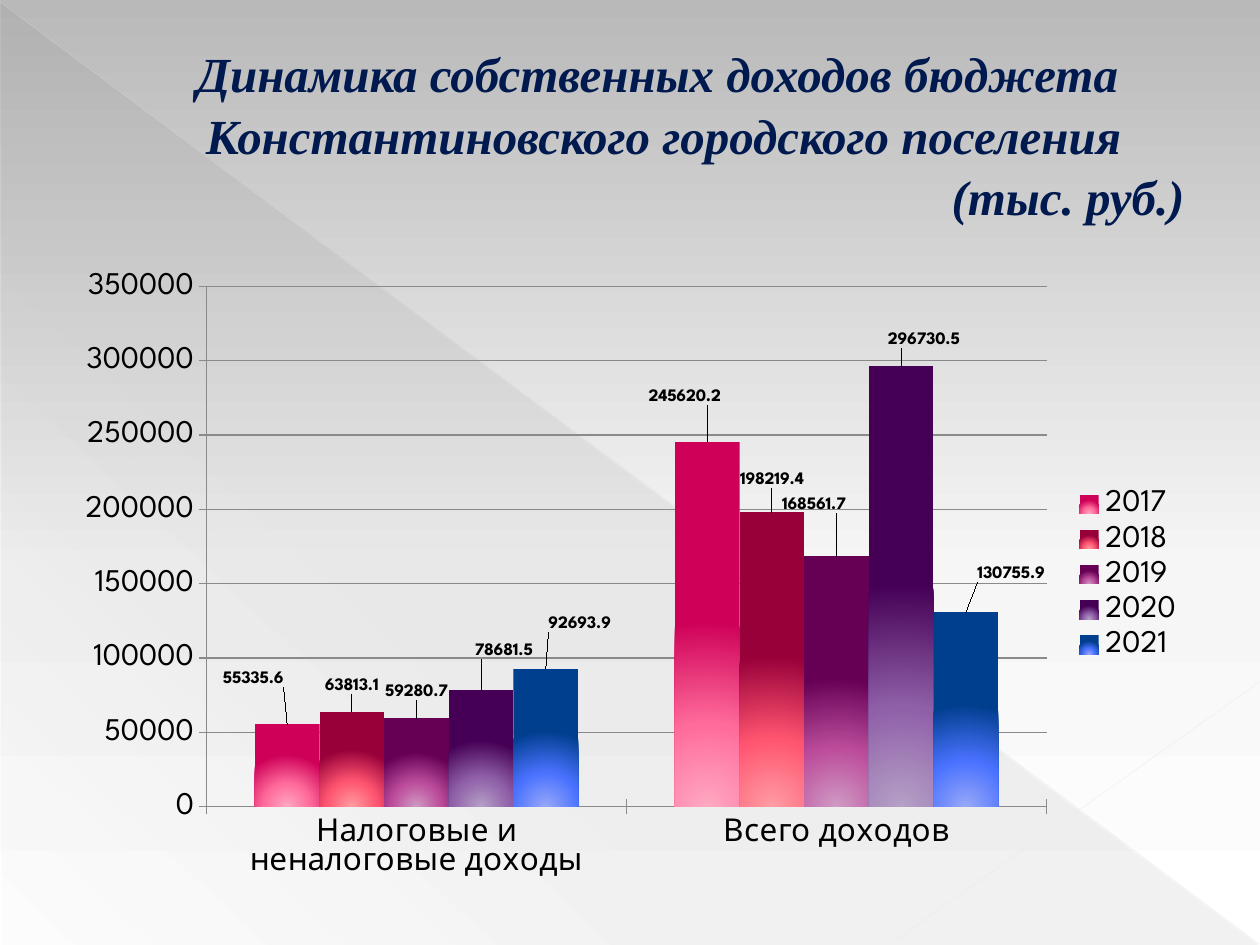
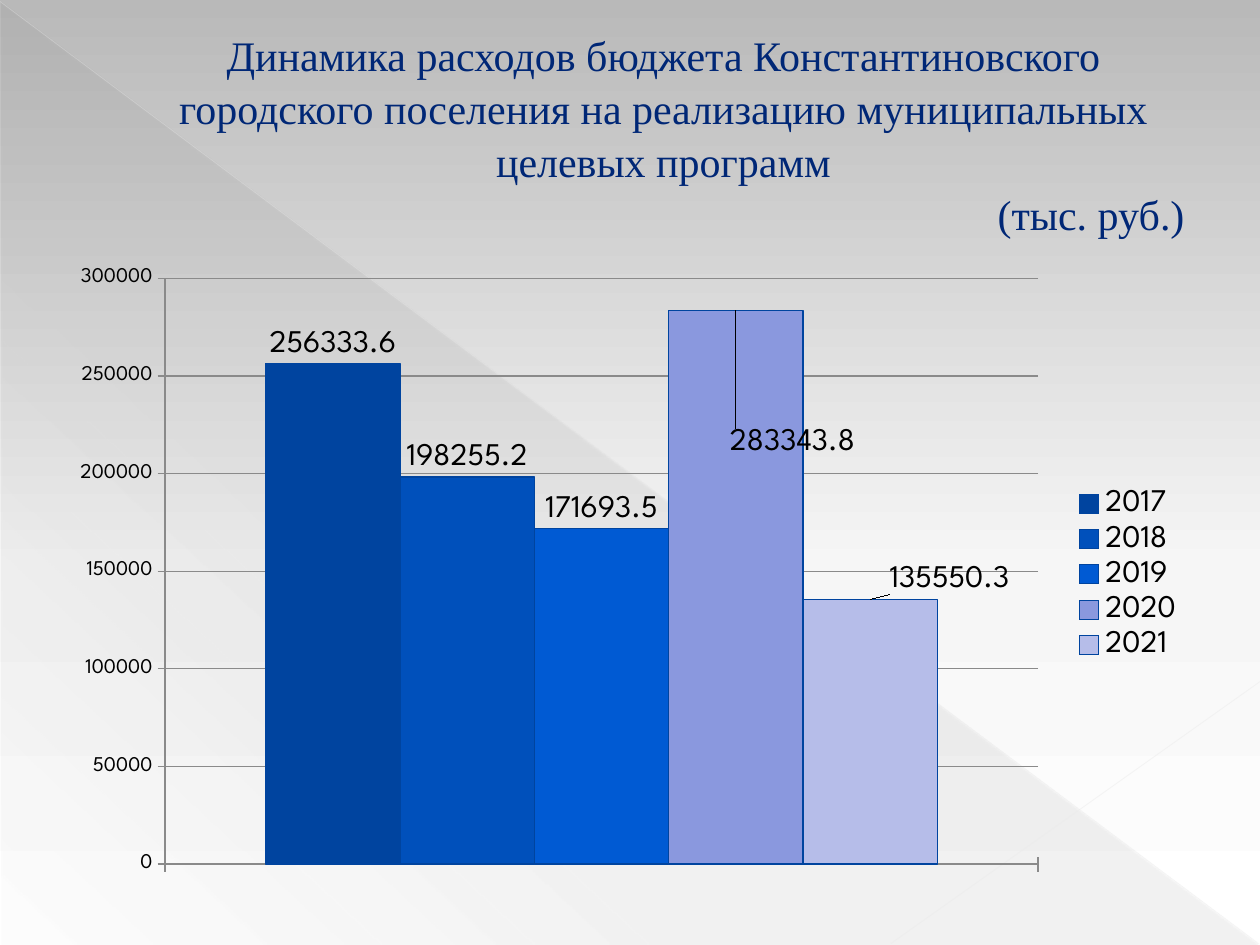
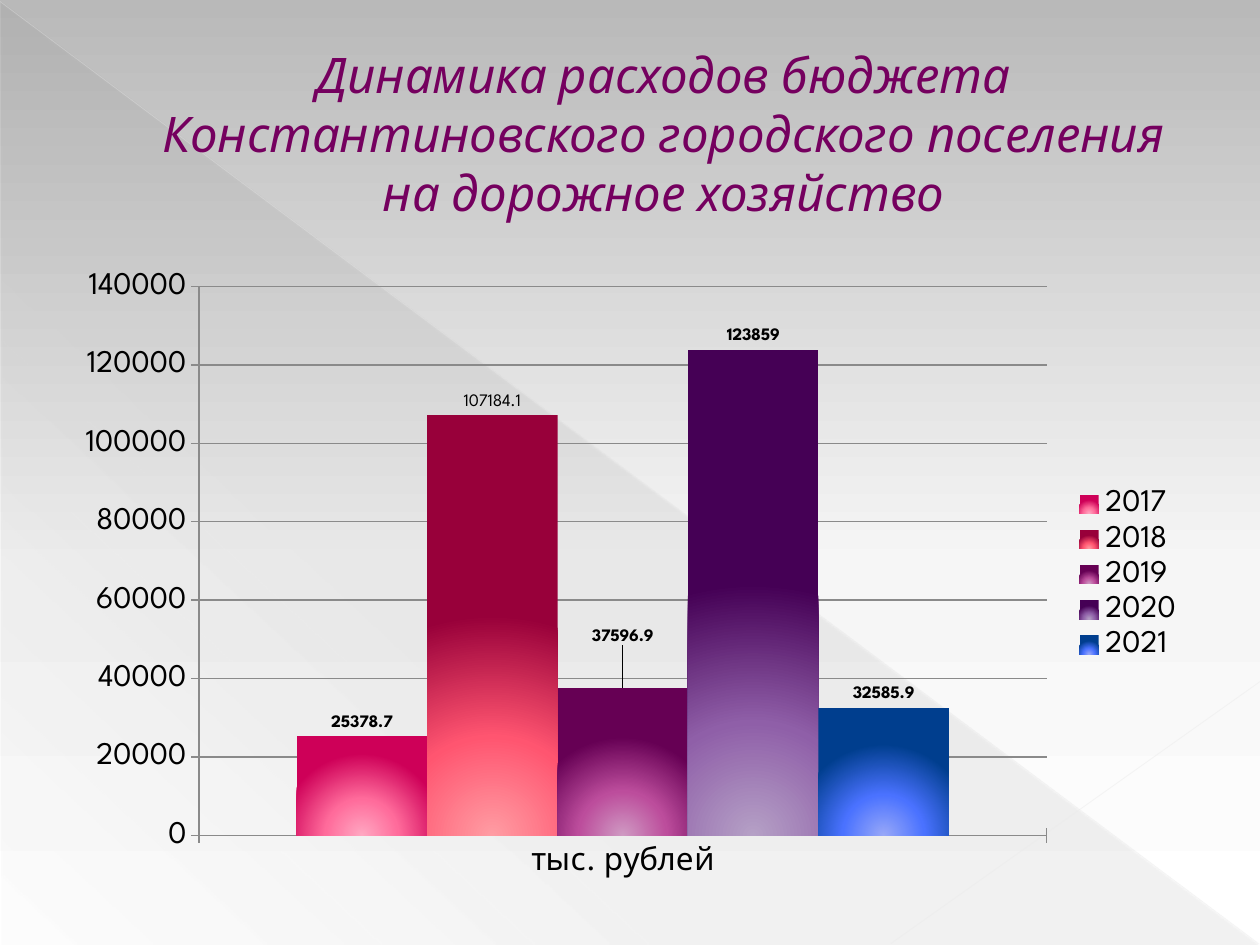
from dataclasses import dataclass, field
from typing import NamedTuple

from lxml import etree
from pptx import Presentation
from pptx.chart.data import CategoryChartData
from pptx.dml.color import RGBColor
from pptx.enum.chart import (
    XL_CHART_TYPE,
    XL_LABEL_POSITION,
    XL_LEGEND_POSITION,
    XL_TICK_LABEL_POSITION,
    XL_TICK_MARK,
)
from pptx.enum.shapes import MSO_CONNECTOR, MSO_SHAPE
from pptx.enum.text import MSO_ANCHOR, PP_ALIGN
from pptx.oxml import parse_xml
from pptx.oxml.ns import nsdecls, qn
from pptx.util import Cm, Pt

COLUMN_CLUSTERED = XL_CHART_TYPE.COLUMN_CLUSTERED
OUTSIDE_END = XL_LABEL_POSITION.OUTSIDE_END
LEGEND_RIGHT = XL_LEGEND_POSITION.RIGHT
NO_TICK_LABELS = XL_TICK_LABEL_POSITION.NONE
TICK_CROSS = XL_TICK_MARK.CROSS
STRAIGHT = MSO_CONNECTOR.STRAIGHT
RIGHT_TRIANGLE = MSO_SHAPE.RIGHT_TRIANGLE
MIDDLE = MSO_ANCHOR.MIDDLE
CENTER = PP_ALIGN.CENTER
RIGHT = PP_ALIGN.RIGHT

BODY_FONT = "League Spartan"
SERIF_FONT = "Times New Roman"

BLACK = RGBColor(0x00, 0x00, 0x00)
WHITE = RGBColor(0xFF, 0xFF, 0xFF)
SKY_GRAY = RGBColor(0xB9, 0xB9, 0xB9)
PALE_GRAY = RGBColor(0xF6, 0xF6, 0xF6)
WEDGE_GRAY = RGBColor(0x66, 0x66, 0x66)
DIAGONAL_GRAY = RGBColor(0xE8, 0xE8, 0xE8)
CORNER_GRAY = RGBColor(0xEA, 0xEA, 0xEA)
AXIS_GRAY = RGBColor(0x8A, 0x8A, 0x8A)
TITLE_OUTLINE = RGBColor(0xB1, 0x27, 0x61)
NAVY = RGBColor(0x00, 0x1A, 0x4F)
BLUE = RGBColor(0x00, 0x27, 0x76)
PLUM = RGBColor(0x75, 0x00, 0x5F)
BAR_EDGE = RGBColor(0x00, 0x44, 0x9F)

YEARS = ("2017", "2018", "2019", "2020", "2021")
GLOWS = (
    (RGBColor(0xFF, 0xA8, 0xC2), RGBColor(0xFF, 0x6B, 0x9B), RGBColor(0xCE, 0x00, 0x58)),
    (RGBColor(0xFF, 0x9C, 0xA3), RGBColor(0xFF, 0x55, 0x70), RGBColor(0x98, 0x00, 0x3A)),
    (RGBColor(0xCF, 0x9A, 0xC3), RGBColor(0xBC, 0x4D, 0x9C), RGBColor(0x66, 0x00, 0x54)),
    (RGBColor(0xB5, 0xA0, 0xC6), RGBColor(0x8F, 0x5F, 0xA8), RGBColor(0x45, 0x00, 0x55)),
    (RGBColor(0x98, 0xA8, 0xF8), RGBColor(0x4A, 0x72, 0xFF), RGBColor(0x00, 0x3E, 0x8E)),
)
BLUES = (
    BAR_EDGE,
    RGBColor(0x00, 0x50, 0xBB),
    RGBColor(0x00, 0x5A, 0xD3),
    RGBColor(0x8A, 0x98, 0xDE),
    RGBColor(0xB6, 0xBD, 0xE9),
)


class Stop(NamedTuple):
    percent: int
    color: RGBColor
    opacity: int = 100


class Streak(NamedTuple):
    start: tuple[float, float]
    end: tuple[float, float]
    color: RGBColor
    width: float
    opacity: int


class Offset(NamedTuple):
    year: str
    category: int
    x: float
    y: float


@dataclass(frozen=True)
class Title:
    lines: tuple[str, ...]
    size: int
    color: RGBColor
    font: str = SERIF_FONT
    bold: bool = False
    italic: bool = False
    unit: str = ""
    spacing: float = 1.05


@dataclass(frozen=True)
class BudgetChart:
    categories: tuple[str, ...]
    values: tuple[tuple[float, ...], ...]
    offsets: tuple[Offset, ...] = field(default=())
    glowing: bool = True
    label_size: int = 10
    label_bold: bool = True
    plain_years: tuple[str, ...] = ()
    value_axis_size: int = 18
    category_labels: bool = True
    plot_area: tuple[float, ...] = ()


STREAKS = (
    Streak((0, 0.03), (25.37, 19.02), DIAGONAL_GRAY, 0.39, 35),
    Streak((25.4, 13.74), (17.96, 19.02), CORNER_GRAY, 0.47, 45),
)
SKY = (Stop(0, SKY_GRAY), Stop(60, PALE_GRAY), Stop(100, WHITE))
WEDGE = (Stop(0, WEDGE_GRAY, 10), Stop(70, WEDGE_GRAY, 8), Stop(100, WEDGE_GRAY, 1))
LINEAR = '<a:lin ang="{}" scaled="0"/>'
FROM_BASE = (
    '<a:path path="circle"><a:fillToRect l="50000" t="100000" r="50000" b="0"/></a:path>'
)

PAGES = (
    (
        Title(
            (
                "Динамика собственных доходов бюджета ",
                "Константиновского городского поселения",
            ),
            28, NAVY, bold=True, italic=True, unit="(тыс. руб.)",
        ),
        BudgetChart(
            ("Налоговые и неналоговые доходы", "Всего доходов"),
            (
                (55335.6, 245620.2),
                (63813.1, 198219.4),
                (59280.7, 168561.7),
                (78681.5, 296730.5),
                (92693.9, 130755.9),
            ),
            (
                Offset("2017", 0, -0.03, -0.05), Offset("2017", 1, -0.02, -0.05),
                Offset("2018", 0, 0, -0.02), Offset("2018", 1, 0, -0.03),
                Offset("2019", 0, 0, -0.02), Offset("2019", 1, -0.02, -0.06),
                Offset("2020", 0, 0.02, -0.04), Offset("2020", 1, 0.02, -0.02),
                Offset("2021", 0, 0.03, -0.05), Offset("2021", 1, 0.04, -0.04),
            ),
        ),
    ),
    (
        Title(
            (
                "Динамика расходов бюджета Константиновского городского поселения "
                "на реализацию муниципальных целевых программ",
            ),
            24, BLUE, unit="(тыс. руб.)",
        ),
        BudgetChart(
            ("1",),
            ((256333.6,), (198255.2,), (171693.5,), (283343.8,), (135550.3,)),
            (Offset("2020", 0, 0.05, 0.24), Offset("2021", 0, 0.07, 0)),
            glowing=False, label_size=18, label_bold=False, value_axis_size=12,
            category_labels=False, plot_area=(0.09, 0.03, 0.77, 0.93),
        ),
    ),
    (
        Title(
            (
                "Динамика расходов бюджета Константиновского городского поселения "
                "на дорожное хозяйство",
            ),
            28, PLUM, font=BODY_FONT, italic=True, spacing=1.0,
        ),
        BudgetChart(
            ("тыс. рублей",),
            ((25378.7,), (107184.1,), (37596.9,), (123859,), (32585.9,)),
            (Offset("2019", 0, 0, -0.06),),
            plain_years=("2018",),
        ),
    ),
)


def color_xml(color: RGBColor, opacity: int) -> str:
    return f'<a:srgbClr val="{color}"><a:alpha val="{opacity * 1000}"/></a:srgbClr>'


def replace_solid_fill(parent, stops: tuple[Stop, ...], direction: str) -> None:
    stop_list = "".join(
        f'<a:gs pos="{stop.percent * 1000}">{color_xml(stop.color, stop.opacity)}</a:gs>'
        for stop in stops
    )
    gradient = parse_xml(
        f'<a:gradFill {nsdecls("a")} rotWithShape="1">'
        f"<a:gsLst>{stop_list}</a:gsLst>{direction}</a:gradFill>"
    )
    parent.replace(parent.find(qn("a:solidFill")), gradient)


def manual_layout(**settings):
    entries = "".join(f'<c:{key} val="{value}"/>' for key, value in settings.items())
    return parse_xml(
        f'<c:layout {nsdecls("c")}><c:manualLayout>{entries}</c:manualLayout></c:layout>'
    )


def paint_sky(master) -> None:
    fill = master.background.fill
    fill.solid()
    fill.fore_color.rgb = WHITE
    backdrop = master.element.find(f'.//{qn("p:bgPr")}')
    replace_solid_fill(backdrop, SKY, LINEAR.format(90 * 60000))


def draw_streak(slide, streak: Streak) -> None:
    line = slide.shapes.add_connector(
        STRAIGHT, *(Cm(length) for length in streak.start + streak.end)
    )
    line.line.width = Pt(streak.width)
    line.line.color.rgb = streak.color
    properties = line._element.spPr
    color = properties.find(f'.//{qn("a:srgbClr")}')
    etree.SubElement(color, qn("a:alpha")).set("val", str(streak.opacity * 1000))
    etree.SubElement(properties, qn("a:effectLst"))


def draw_backdrop(slide) -> None:
    wedge = slide.shapes.add_shape(RIGHT_TRIANGLE, Cm(0.03), Cm(0.05), Cm(25.35), Cm(19))
    wedge.shadow.inherit = False
    wedge.line.fill.background()
    wedge.fill.solid()
    wedge.fill.fore_color.rgb = WEDGE_GRAY
    replace_solid_fill(wedge._element.spPr, WEDGE, LINEAR.format(133 * 60000))
    for streak in STREAKS:
        draw_streak(slide, streak)


def draw_title(slide, title: Title) -> None:
    heading = slide.shapes.add_textbox(Cm(1.27), Cm(0.74), Cm(22.86), Cm(3.89))
    frame = heading.text_frame
    frame.word_wrap = True
    frame.vertical_anchor = MIDDLE
    lines = title.lines + ((title.unit,) if title.unit else ())
    frame.text = "\n".join(lines)
    for line, paragraph in zip(lines, frame.paragraphs):
        paragraph.alignment = RIGHT if line == title.unit else CENTER
        paragraph.line_spacing = title.spacing
        paragraph._p.get_or_add_pPr().set("marL", str(Cm(1.35)))
        for run in paragraph.runs:
            run.font.name = title.font
            run.font.size = Pt(title.size)
            run.font.bold = title.bold
            run.font.italic = title.italic
            run.font.color.rgb = title.color
            outline = parse_xml(
                f'<a:ln {nsdecls("a")} w="{Pt(0.5)}"><a:solidFill>'
                f"{color_xml(TITLE_OUTLINE, 100)}</a:solidFill></a:ln>"
            )
            run._r.get_or_add_rPr().insert(0, outline)


def style_font(font, size: int, bold: bool = False) -> None:
    font.name = BODY_FONT
    font.size = Pt(size)
    font.bold = bold
    font.color.rgb = BLACK


def style_bars(series, index: int, glowing: bool) -> None:
    fill = series.format.fill
    fill.solid()
    if glowing:
        fill.fore_color.rgb = GLOWS[index][-1]
        stops = tuple(Stop(*pair) for pair in zip((0, 45, 100), GLOWS[index]))
        replace_solid_fill(series._element.find(qn("c:spPr")), stops, FROM_BASE)
    else:
        fill.fore_color.rgb = BLUES[index]
        series.format.line.color.rgb = BAR_EDGE
        series.format.line.width = Pt(0.75)


def label_bars(series, budget: BudgetChart) -> None:
    bold = budget.label_bold and series.name not in budget.plain_years
    labels = series.data_labels
    labels.show_value = True
    labels.position = OUTSIDE_END
    style_font(labels.font, budget.label_size, bold)
    for offset in budget.offsets:
        if offset.year == series.name:
            label = series.points[offset.category].data_label
            style_font(label.font, budget.label_size, bold)
            label.position = OUTSIDE_END
            moved = series._element.xpath(f'.//c:dLbl[c:idx/@val="{offset.category}"]')[0]
            moved.insert(1, manual_layout(x=offset.x, y=offset.y))


def style_axis(axis, size: int) -> None:
    axis.major_tick_mark = TICK_CROSS
    axis.format.line.color.rgb = AXIS_GRAY
    style_font(axis.tick_labels.font, size)


def draw_budget(slide, budget: BudgetChart) -> None:
    data = CategoryChartData()
    data.categories = budget.categories
    for year, values in zip(YEARS, budget.values):
        data.add_series(year, values)
    chart = slide.shapes.add_chart(
        COLUMN_CLUSTERED, Cm(1.27), Cm(5.23), Cm(22.86), Cm(12.7), data
    ).chart
    chart.has_title = False
    style_font(chart.font, 18)
    chart.has_legend = True
    chart.legend.position = LEGEND_RIGHT
    chart.legend.include_in_layout = False
    style_axis(chart.category_axis, 18)
    style_axis(chart.value_axis, budget.value_axis_size)
    chart.value_axis.has_major_gridlines = True
    chart.value_axis.major_gridlines.format.line.color.rgb = AXIS_GRAY
    if not budget.category_labels:
        chart.category_axis.tick_label_position = NO_TICK_LABELS
    plot = chart.plots[0]
    plot.vary_by_categories = False
    plot.gap_width = 150
    plot.overlap = 0
    for index, series in enumerate(plot.series):
        style_bars(series, index, budget.glowing)
        label_bars(series, budget)
    if budget.plot_area:
        x, y, w, h = budget.plot_area
        area = chart._chartSpace.chart.plotArea
        for automatic in area.findall(qn("c:layout")):
            area.remove(automatic)
        area.insert(0, manual_layout(
            layoutTarget="inner", xMode="edge", yMode="edge", x=x, y=y, w=w, h=h
        ))


def main() -> None:
    presentation = Presentation()
    presentation.slide_width = Cm(25.4)
    presentation.slide_height = Cm(19.05)
    paint_sky(presentation.slide_master)
    for title, budget in PAGES:
        slide = presentation.slides.add_slide(presentation.slide_layouts[6])
        draw_backdrop(slide)
        draw_title(slide, title)
        draw_budget(slide, budget)
    presentation.save("out.pptx")


if __name__ == "__main__":
    main()
